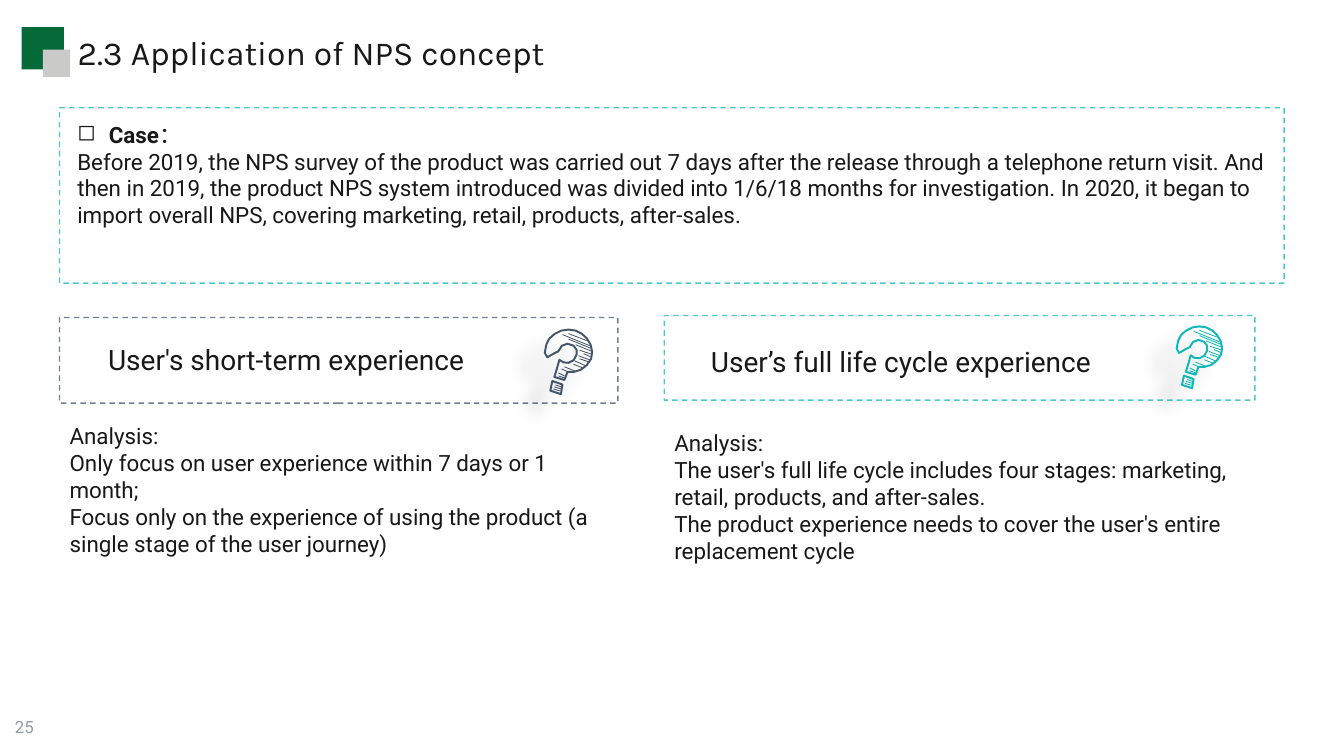
"""Build the slide on the application of the NPS concept."""
from lxml.etree import SubElement
from pptx import Presentation
from pptx.dml.color import RGBColor
from pptx.enum.dml import MSO_LINE
from pptx.enum.shapes import MSO_SHAPE
from pptx.enum.text import MSO_ANCHOR, MSO_AUTO_SIZE, PP_ALIGN
from pptx.oxml.ns import qn
from pptx.util import Pt

INK, SLATE, TEAL = "181818", "44546B", "0FB7B8"
GREEN, SILVER, GREY = "046A38", "CACAC8", "9499A2"

HOOK = [(32, 3), (38, 6), (43, 10.5), (47, 17), (48.5, 24), (47.5, 31), (43, 37.5),
        (37, 42), (30, 44), (24, 44), (21, 52), (11, 49), (13.5, 41), (16, 32),
        (20, 34.5), (25, 35), (30, 32.5), (33, 27), (33, 22), (30, 18), (24, 16),
        (18.5, 18), (15, 23.5), (10, 26), (4, 29.5), (1.5, 25), (3, 17), (6, 11),
        (11, 6.5), (18, 3), (25, 2)]
DOT = [(9, 53), (19, 56.5), (17.5, 66), (7, 62.5)]
HATCHING = [[(25, 6), (43, 13)], [(19, 7), (46, 18)], [(25, 11.5), (47, 20.5)],
            [(32, 17), (48, 23.5)], [(36, 22.5), (48, 26.5)], [(40, 26), (47, 29)],
            [(35, 28), (46, 32)], [(36, 31), (45, 34)], [(31, 33), (42, 38)],
            [(30, 36.5), (39, 40)], [(21, 39), (31, 43)], [(18, 41), (23.5, 43.5)],
            [(15, 45), (21, 48)], [(15, 48), (21, 50)], [(12, 57), (18, 59)],
            [(11, 59), (18, 61)], [(10, 61), (17, 63)]]

CASE = ("Before 2019, the NPS survey of the product was carried out 7 days after the "
        "release through a telephone return visit. And then in 2019, the product NPS "
        "system introduced was divided into 1/6/18 months for investigation. In 2020, "
        "it began to import overall NPS, covering marketing, retail, products, "
        "after-sales.")
SHORT_TERM = ["Analysis:",
              "Only focus on user experience within 7 days or 1 month;",
              "Focus only on the experience of using the product (a single stage of "
              "the user journey)"]
LIFE_CYCLE = ["Analysis:",
              "The user's full life cycle includes four stages: marketing, retail, "
              "products, and after-sales.",
              "The product experience needs to cover the user's entire replacement cycle"]


def rgb(code):
    """Turn a hex string into a colour."""
    return RGBColor.from_string(code)


def style(paragraph, size, color=INK, font="Roboto", bullet=None):
    """Set the bullet, spacing and font of a paragraph."""
    indent = Pt(22.5) if bullet else 0
    properties = paragraph._p.get_or_add_pPr()
    properties.set("marL", str(indent))
    properties.set("indent", str(-indent))
    if bullet:
        SubElement(properties, qn("a:buChar"), char=bullet)
    else:
        SubElement(properties, qn("a:buNone"))
    paragraph.space_before = Pt(0)
    paragraph.font.size = Pt(size)
    paragraph.font.name = font
    paragraph.font.bold = False
    paragraph.font.color.rgb = rgb(color)


def write(holder, box, lines, size, color=INK, font="Roboto", align=PP_ALIGN.LEFT,
          anchor=MSO_ANCHOR.TOP, wrap=True):
    """Place a text holder and fill it with one paragraph per line."""
    holder.left, holder.top, holder.width, holder.height = map(Pt, box)
    frame = holder.text_frame
    frame.auto_size = MSO_AUTO_SIZE.NONE
    frame.word_wrap = wrap
    frame.vertical_anchor = anchor
    frame.text = "\n".join(lines)
    for paragraph in frame.paragraphs:
        style(paragraph, size, color, font)
        paragraph.alignment = align


def add_box(slide, box):
    """Add a rectangle without a shadow."""
    rectangle = slide.shapes.add_shape(MSO_SHAPE.RECTANGLE, *map(Pt, box))
    rectangle.shadow.inherit = False
    return rectangle


def add_square(slide, box, color):
    """Add a filled square of the title mark."""
    square = add_box(slide, box)
    square.fill.solid()
    square.fill.fore_color.rgb = rgb(color)
    square.line.fill.background()


def add_dashed_frame(slide, box, color):
    """Add an unfilled frame with a slightly transparent dashed line."""
    frame = add_box(slide, box)
    frame.fill.background()
    frame.line.color.rgb = rgb(color)
    frame.line.width = Pt(1)
    frame.line.dash_style = MSO_LINE.DASH
    line_color = frame.element.spPr.find(".//" + qn("a:srgbClr"))
    SubElement(line_color, qn("a:alpha"), val="74000")


def add_strokes(slide, left, top, unit, strokes, color, weight, close):
    """Draw point lists as one unfilled outline and return it."""
    builder = slide.shapes.build_freeform(
        strokes[0][0][0] * 10, strokes[0][0][1] * 10, scale=Pt(unit) / 10)
    for start, *rest in strokes:
        builder.move_to(start[0] * 10, start[1] * 10)
        builder.add_line_segments([(x * 10, y * 10) for x, y in rest], close=close)
    drawing = builder.convert_to_shape(Pt(left), Pt(top))
    drawing.shadow.inherit = False
    drawing.fill.background()
    drawing.line.color.rgb = rgb(color)
    drawing.line.width = Pt(weight)
    return drawing


def add_question_mark(slide, left, top, unit, color):
    """Draw a hatched question mark with a soft shadow."""
    outline = add_strokes(slide, left, top, unit, [HOOK, DOT], color, 1.4, True)
    effects = outline.element.spPr.find(qn("a:effectLst"))
    shadow = SubElement(effects, qn("a:outerShdw"), blurRad=str(Pt(11.8)),
                        dist=str(Pt(19.7)), dir=str(141 * 60000), rotWithShape="0")
    black = SubElement(shadow, qn("a:srgbClr"), val="000000")
    SubElement(black, qn("a:alpha"), val="28000")
    add_strokes(slide, left, top, unit, HATCHING, color, 0.6, False)


def add_case(slide):
    """Add the framed case description."""
    add_dashed_frame(slide, (42.5, 77, 874.8, 125.3), TEAL)
    case = slide.shapes.add_textbox(0, 0, 0, 0)
    write(case, (48.2, 82.8, 869, 104.4), ["", CASE], 16)
    heading = case.text_frame.paragraphs[0]
    heading._p.remove(heading._p.pPr)
    style(heading, 16, bullet="◻")
    label = heading.add_run()
    label.text = "Case"
    label.font.bold = True
    heading.add_run().text = "："


def main():
    """Build and save the slide."""
    deck = Presentation()
    deck.slide_width, deck.slide_height = Pt(960), Pt(540)
    slide = deck.slides.add_slide(deck.slide_layouts[4])
    title, short_head, short_body, cycle_head, cycle_body = slide.placeholders

    add_square(slide, (15.5, 19.4, 30.2, 30.2), GREEN)
    add_square(slide, (30.6, 35.4, 19.6, 19.6), SILVER)
    write(title, (48.2, 19.4, 744.5, 76.3), ["2.3 Application of NPS concept"], 24,
          font="Karla")
    add_case(slide)

    add_dashed_frame(slide, (42.5, 226.8, 398.9, 61.2), SLATE)
    add_dashed_frame(slide, (474.5, 225.4, 421.9, 60.5), TEAL)
    add_question_mark(slide, 388.1, 234, 0.72, SLATE)
    add_question_mark(slide, 839.5, 231.8, 0.69, TEAL)

    write(short_head, (42.5, 241.2, 324, 31.7), ["User's short-term experience"], 20,
          align=PP_ALIGN.CENTER, wrap=False)
    write(cycle_head, (470.2, 242.6, 347, 31.7), ["User’s full life cycle experience"],
          20, align=PP_ALIGN.CENTER, wrap=False)
    write(short_body, (42.5, 298.1, 398.9, 104.4), SHORT_TERM, 16)
    write(cycle_body, (474.5, 303.1, 421.9, 104.4), LIFE_CYCLE, 16)

    number = slide.shapes.add_textbox(0, 0, 0, 0)
    write(number, (3.6, 504.7, 216, 28.8), ["25"], 12, GREY, anchor=MSO_ANCHOR.MIDDLE)
    deck.save("out.pptx")


if __name__ == "__main__":
    main()
